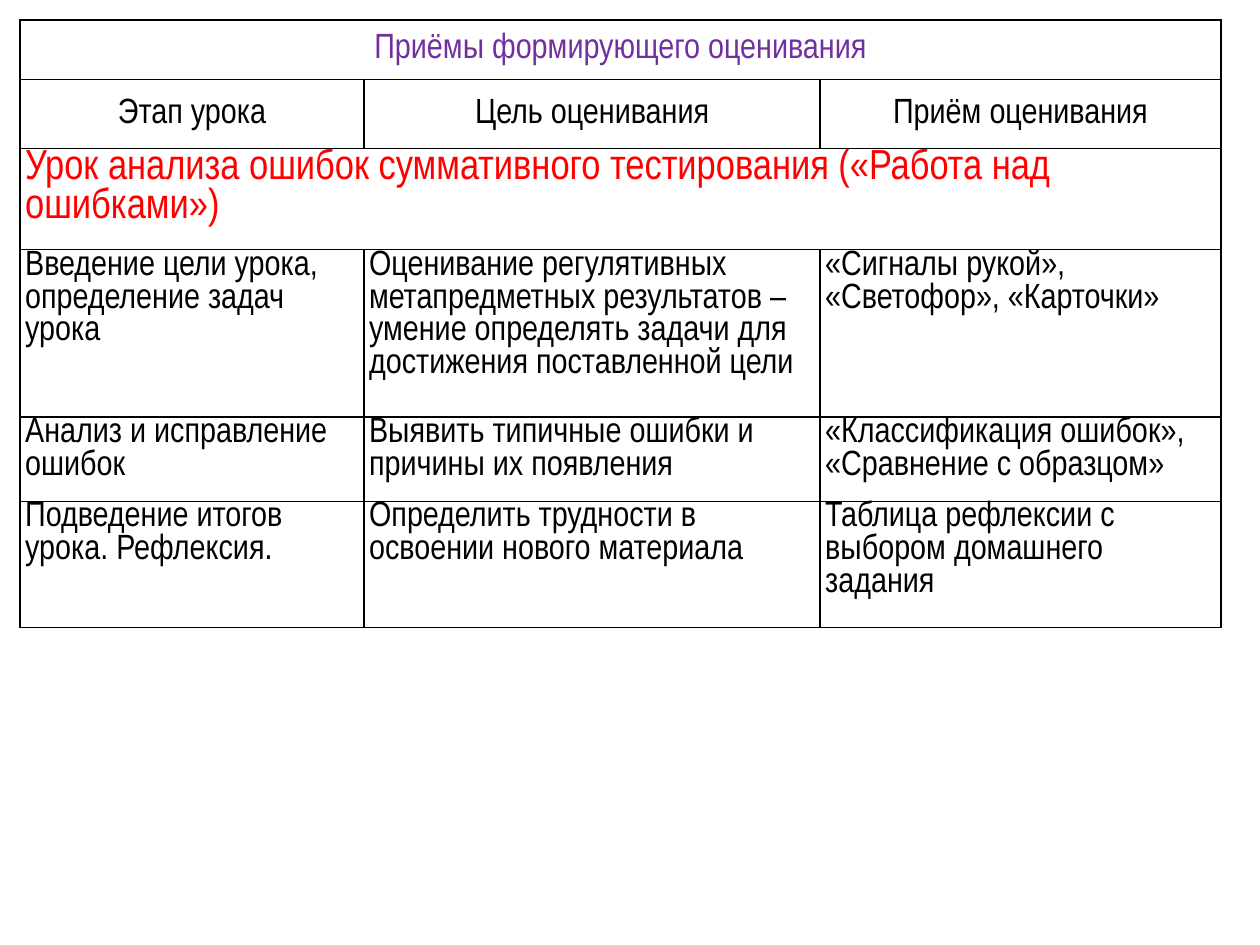
from dataclasses import dataclass

from lxml import etree
from pptx import Presentation
from pptx.dml.color import RGBColor
from pptx.enum.text import MSO_ANCHOR, PP_ALIGN
from pptx.oxml.ns import qn
from pptx.util import Inches, Pt

LEFT, CENTER = PP_ALIGN.LEFT, PP_ALIGN.CENTER
TOP, MIDDLE = MSO_ANCHOR.TOP, MSO_ANCHOR.MIDDLE


@dataclass(frozen=True)
class Theme:
    font: str = "Arial Narrow"
    body_size: int = 20
    lesson_size: int = 24
    border_width: int = 1
    black: str = "000000"
    purple: str = "7030A0"
    red: str = "FF0000"


THEME = Theme()


@dataclass(frozen=True)
class TableRow:
    height: float
    texts: tuple[str, ...]
    color: str = THEME.black
    size: int = THEME.body_size
    heading: bool = False


COLUMN_WIDTHS = (2.73, 3.62, 3.18)
ROWS = (
    TableRow(0.47, ("Приёмы формирующего оценивания",), color=THEME.purple, heading=True),
    TableRow(0.55, ("Этап урока", "Цель оценивания", "Приём оценивания"), heading=True),
    TableRow(
        0.8,
        ("Урок анализа ошибок суммативного тестирования («Работа над ошибками»)",),
        color=THEME.red,
        size=THEME.lesson_size,
    ),
    TableRow(1.33, (
        "Введение цели урока, определение задач урока",
        "Оценивание регулятивных метапредметных результатов – "
        "умение определять задачи для достижения поставленной цели",
        "«Сигналы рукой», «Светофор», «Карточки»",
    )),
    TableRow(0.67, (
        "Анализ и исправление ошибок",
        "Выявить типичные ошибки и причины их появления",
        "«Классификация ошибок», «Сравнение с образцом»",
    )),
    TableRow(1.0, (
        "Подведение итогов урока. Рефлексия.",
        "Определить трудности в освоении нового материала",
        "Таблица рефлексии с выбором домашнего задания",
    )),
)


def style_cell(cell) -> None:
    cell.margin_left = cell.margin_right = Inches(0.04)
    cell.margin_top = cell.margin_bottom = Inches(0)
    properties = cell._tc.get_or_add_tcPr()
    for side in ("a:lnL", "a:lnR", "a:lnT", "a:lnB"):
        line = etree.SubElement(properties, qn(side), w=str(Pt(THEME.border_width)))
        fill = etree.SubElement(line, qn("a:solidFill"))
        etree.SubElement(fill, qn("a:srgbClr"), val=THEME.black)
    cell.fill.background()


def write_cell(cell, text: str, row: TableRow) -> None:
    cell.vertical_anchor = MIDDLE if row.heading else TOP
    para = cell.text_frame.paragraphs[0]
    para.alignment = CENTER if row.heading else LEFT
    span = para.add_run()
    span.text = text
    span.font.name = THEME.font
    span.font.size = Pt(row.size)
    span.font.color.rgb = RGBColor.from_string(row.color)


def add_assessment_table(page) -> None:
    frame = page.shapes.add_table(
        len(ROWS), len(COLUMN_WIDTHS), Inches(0.16), Inches(0.16),
        Inches(sum(COLUMN_WIDTHS)), Inches(sum(row.height for row in ROWS)),
    )
    table = frame.table
    table.first_row = table.horz_banding = False
    for column, width in zip(table.columns, COLUMN_WIDTHS):
        column.width = Inches(width)
    for index, row in enumerate(ROWS):
        table.rows[index].height = Inches(row.height)
        for cell in table.rows[index].cells:
            style_cell(cell)
        if len(row.texts) == 1:
            table.cell(index, 0).merge(table.cell(index, len(COLUMN_WIDTHS) - 1))
        for column_index, text in enumerate(row.texts):
            write_cell(table.cell(index, column_index), text, row)


def main() -> None:
    deck = Presentation()
    deck.slide_width, deck.slide_height = Inches(10), Inches(7.5)
    page = deck.slides.add_slide(deck.slide_layouts[6])
    add_assessment_table(page)
    deck.save("out.pptx")


if __name__ == "__main__":
    main()
